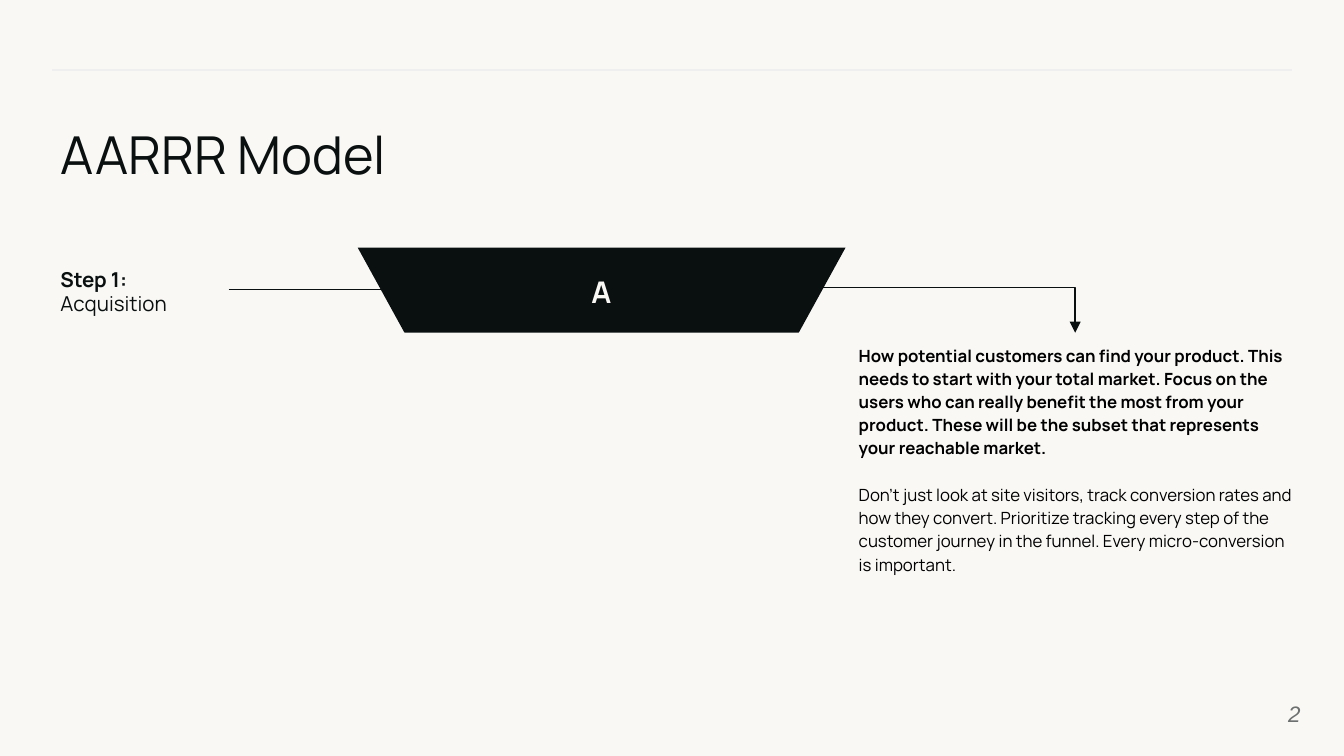
from lxml.etree import SubElement
from pptx import Presentation
from pptx.dml.color import RGBColor
from pptx.enum.shapes import MSO_CONNECTOR, MSO_SHAPE
from pptx.enum.text import MSO_ANCHOR, MSO_AUTO_SIZE, PP_ALIGN
from pptx.oxml.ns import qn
from pptx.util import Cm, Pt

COLORS = {
    "background": "F9F8F5",
    "ink": "09100F",
    "black": "000000",
    "rule": "EFEFEF",
    "number": "6C706F",
}


def fill_text(shape, box, paragraphs, size, color, font="Manrope",
              anchor=MSO_ANCHOR.MIDDLE, align=PP_ALIGN.LEFT, spacing=None):
    """Place a shape and write (text, bold) pairs, one paragraph each."""
    shape.left, shape.top, shape.width, shape.height = [Cm(length) for length in box]
    frame = shape.text_frame
    frame.word_wrap = True
    frame.auto_size = MSO_AUTO_SIZE.NONE
    frame.vertical_anchor = anchor
    frame.margin_left = frame.margin_top = frame.margin_right = frame.margin_bottom = 0
    for index, (text, bold) in enumerate(paragraphs):
        paragraph = frame.add_paragraph() if index else frame.paragraphs[0]
        paragraph.alignment = align
        paragraph.line_spacing = spacing
        run = paragraph.add_run()
        run.text = text
        run.font.name = font
        run.font.size = Pt(size)
        run.font.bold = bold
        run.font.color.rgb = RGBColor.from_string(COLORS[color])
    return frame


def add_line(kind, start, end, color):
    line = slide.shapes.add_connector(
        kind, *[Cm(length) for length in (*start, *end)])
    line.line.width = Pt(0.75)
    line.line.color.rgb = RGBColor.from_string(COLORS[color])
    SubElement(line._element.spPr, qn("a:effectLst"))
    return line


presentation = Presentation()
presentation.slide_width = Cm(25.4)
presentation.slide_height = Cm(14.29)
slide = presentation.slides.add_slide(presentation.slide_layouts[5])
slide.background.fill.solid()
slide.background.fill.fore_color.rgb = RGBColor.from_string(COLORS["background"])

# Header rule, page number and title
add_line(MSO_CONNECTOR.STRAIGHT, (24.41, 1.32), (0.99, 1.32), "rule")

page_number = fill_text(slide.shapes.add_textbox(0, 0, 0, 0), (23.06, 12.95, 1.52, 1.09),
                        [("2", False)], 12, "number", font="Arial", align=PP_ALIGN.RIGHT)
page_number.paragraphs[0].runs[0].font.italic = True

title = fill_text(slide.shapes.title, (1.14, 2.31, 23.44, 1.3),
                  [("AARRR Model", False)], 28, "ink", anchor=MSO_ANCHOR.TOP)
title.paragraphs[0].space_after = Pt(10)

# Step label and its line to the funnel
fill_text(slide.shapes.add_textbox(0, 0, 0, 0), (1.14, 5.08, 3.18, 0.86),
          [("Step 1:", True), ("Acquisition", False)], 11, "ink")
add_line(MSO_CONNECTOR.STRAIGHT, (4.32, 5.47), (10.95, 5.47), "ink")

# Funnel: an inverted triangle whose lower stages are covered
for preset, box, rotation, color in (
    (MSO_SHAPE.ISOSCELES_TRIANGLE, (6.76, 4.68, 9.22, 8.38), 180, "ink"),
    (MSO_SHAPE.RECTANGLE, (6.63, 6.29, 9.35, 6.78), 0, "background"),
):
    shape = slide.shapes.add_shape(preset, *[Cm(length) for length in box])
    shape.rotation = rotation
    shape.shadow.inherit = False
    shape.fill.solid()
    shape.fill.fore_color.rgb = RGBColor.from_string(COLORS[color])
    shape.line.fill.background()

fill_text(slide.shapes.add_textbox(0, 0, 0, 0), (9.65, 4.67, 3.43, 1.57),
          [("A", True)], 16, "background", align=PP_ALIGN.CENTER, spacing=1.15)

# Arrow that turns down to the explanation
arrow = add_line(MSO_CONNECTOR.ELBOW, (14.94, 5.44), (20.32, 6.29), "ink")
arrow._element.spPr.find(qn("a:prstGeom")).set("prst", "bentConnector2")
SubElement(arrow.line._get_or_add_ln(), qn("a:tailEnd"), type="triangle")

explanation = fill_text(
    slide.shapes.add_textbox(0, 0, 0, 0), (16.23, 6.3, 8.2, 5.11),
    [
        ("How potential customers can find your product. This needs to start with "
         "your total market. Focus on the users who can really benefit the most from "
         "your product. These will be the subset that represents your reachable "
         "market.", True),
        ("Don’t just look at site visitors, track conversion rates and how they "
         "convert. Prioritize tracking every step of the customer journey in the "
         "funnel. Every micro-conversion is important.", False),
    ],
    9, "black", spacing=1.15)
explanation.margin_bottom = Cm(0.38)
explanation.paragraphs[1].space_before = Pt(12.5)

presentation.save("out.pptx")
